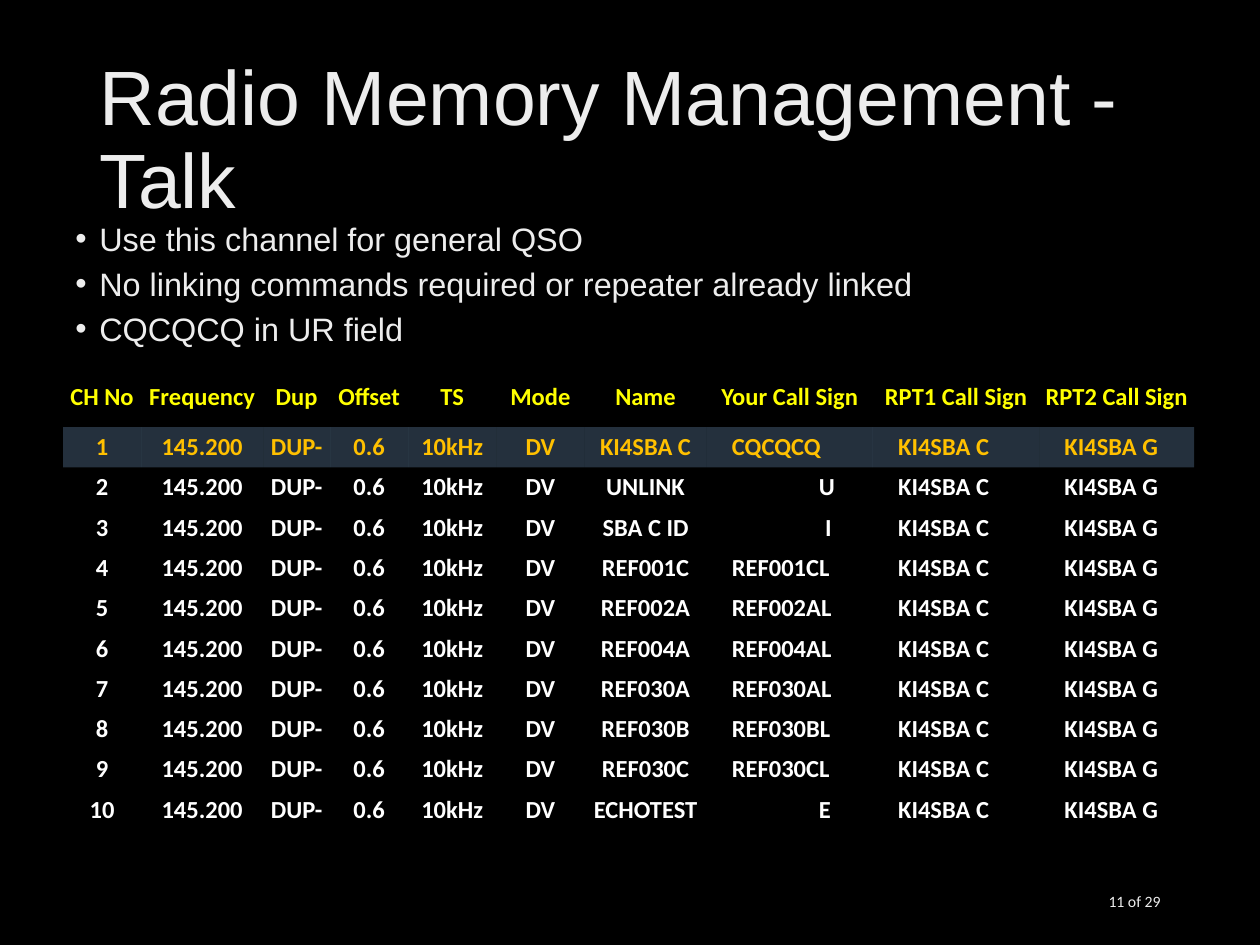
import pptx
import pptx.dml.color
import pptx.enum.text
import pptx.oxml.ns
import pptx.util
from lxml import etree

Inches = pptx.util.Inches
Pt = pptx.util.Pt
RGBColor = pptx.dml.color.RGBColor
ALIGN = pptx.enum.text.PP_ALIGN
MIDDLE = pptx.enum.text.MSO_ANCHOR.MIDDLE
qn = pptx.oxml.ns.qn

BLACK = RGBColor(0x00, 0x00, 0x00)
WHITE = RGBColor(0xFF, 0xFF, 0xFF)
SILVER = RGBColor(0xED, 0xED, 0xED)
YELLOW = RGBColor(0xFF, 0xFF, 0x00)
AMBER = RGBColor(0xFF, 0xC0, 0x00)
SKY = RGBColor(0x99, 0xCC, 0xFF)
PLAIN_TABLE_STYLE = "{2D5ABB26-0587-4C30-8999-92F81FD0307C}"

# Content
TITLE = "Radio Memory Management - Talk"
BULLETS = [
    "Use this channel for general QSO",
    "No linking commands required or repeater already linked",
    "CQCQCQ in UR field",
]
PAGE_NUMBER = "11 of 29"
HEADER = ["CH No", "Frequency", "Dup", "Offset", "TS", "Mode", "Name",
          "Your Call Sign", "RPT1 Call Sign", "RPT2 Call Sign"]
CHANNELS = [  # name, your call sign
    ("KI4SBA C", "CQCQCQ"),
    ("UNLINK", "U"),
    ("SBA C ID", "I"),
    ("REF001C", "REF001CL"),
    ("REF002A", "REF002AL"),
    ("REF004A", "REF004AL"),
    ("REF030A", "REF030AL"),
    ("REF030B", "REF030BL"),
    ("REF030C", "REF030CL"),
    ("ECHOTEST", "E"),
]
RADIO = ["145.200", "DUP-", "0.6", "10kHz", "DV"]
REPEATERS = ["KI4SBA C", "KI4SBA G"]

COLUMN_WIDTHS = [0.62, 0.97, 0.53, 0.62, 0.7, 0.7, 0.97, 1.32, 1.32, 1.23]
HEADER_HEIGHT, ROW_HEIGHT = 0.47, 0.32
FIRST_CALL_COLUMN = HEADER.index("Your Call Sign")
CALL_INDENT = 0.2
COMMAND_INDENTS = {"U": 0.89, "I": 0.94, "E": 0.89}  # command in eighth place


def apply(target, values):
    for name, value in values.items():
        setattr(target, name, value)


def write(para, text, font, size, color, bold=False, **layout):
    para.text = text
    apply(para, layout)
    apply(para.font, {"name": font, "size": Pt(size), "bold": bold})
    para.font.color.rgb = color


def add_box(page, left, top, width, height):
    box = page.shapes.add_textbox(Inches(left), Inches(top),
                                  Inches(width), Inches(height))
    box.text_frame.word_wrap = True
    return box.text_frame


def add_bullet(para):
    properties = para._p.get_or_add_pPr()
    properties.set("marL", str(Inches(0.19)))
    properties.set("indent", str(-Inches(0.19)))
    etree.SubElement(properties, qn("a:buFont"), typeface="Arial")
    etree.SubElement(properties, qn("a:buChar"), char="•")


def fill_highlight(cell):
    cell.fill.solid()
    cell.fill.fore_color.rgb = SKY
    color = cell._tc.tcPr.find(".//" + qn("a:srgbClr"))
    etree.SubElement(color, qn("a:alpha"), val="24000")


def add_channel_table(page):
    rows = [HEADER] + [
        [str(number), *RADIO, name, call, *REPEATERS]
        for number, (name, call) in enumerate(CHANNELS, 1)
    ]
    heights = [HEADER_HEIGHT] + [ROW_HEIGHT] * len(CHANNELS)
    frame = page.shapes.add_table(
        len(rows), len(HEADER), Inches(0.5), Inches(2.92),
        Inches(sum(COLUMN_WIDTHS)), Inches(sum(heights)))
    table = frame.table
    table.horz_banding = False
    table._tbl.tblPr.find(qn("a:tableStyleId")).text = PLAIN_TABLE_STYLE
    for column, width in zip(table.columns, COLUMN_WIDTHS):
        column.width = Inches(width)
    row_colors = [YELLOW, AMBER] + [WHITE] * (len(rows) - 2)
    for r, (texts, height, color) in enumerate(zip(rows, heights, row_colors)):
        table.rows[r].height = Inches(height)
        for c, text in enumerate(texts):
            cell = table.cell(r, c)
            is_call = r > 0 and c >= FIRST_CALL_COLUMN
            indent = COMMAND_INDENTS.get(text, CALL_INDENT) if is_call else 0
            apply(cell, {"margin_left": Inches(indent), "margin_right": 0,
                         "margin_top": 0, "margin_bottom": 0,
                         "vertical_anchor": MIDDLE})
            write(cell.text_frame.paragraphs[0], text, "Calibri", 14, color,
                  bold=True, alignment=ALIGN.LEFT if is_call else ALIGN.CENTER)
            if r == 1:
                fill_highlight(cell)
            else:
                cell.fill.background()


def main():
    deck = pptx.Presentation()
    apply(deck, {"slide_width": Inches(10), "slide_height": Inches(7.5)})
    page = deck.slides.add_slide(deck.slide_layouts[5])
    page.background.fill.solid()
    page.background.fill.fore_color.rgb = BLACK

    # Title
    title = page.shapes.title
    apply(title, {"left": Inches(0.69), "top": Inches(0.4),
                  "width": Inches(8.62), "height": Inches(1.45)})
    apply(title.text_frame, {"vertical_anchor": MIDDLE, "word_wrap": True,
                             "auto_size": pptx.enum.text.MSO_AUTO_SIZE.NONE})
    write(title.text_frame.paragraphs[0], TITLE, "Arial", 44, SILVER,
          alignment=ALIGN.LEFT, line_spacing=0.9)

    # Bullets
    body = add_box(page, 0.5, 1.75, 9, 1.08)
    for i, text in enumerate(BULLETS):
        para = body.add_paragraph() if i else body.paragraphs[0]
        add_bullet(para)
        write(para, text, "Arial", 18.5, SILVER, line_spacing=0.8,
              space_before=Pt(8 if i else 0))

    # Channel table
    add_channel_table(page)

    # Page number
    footer = add_box(page, 7.06, 6.95, 2.25, 0.4)
    footer.vertical_anchor = MIDDLE
    write(footer.paragraphs[0], PAGE_NUMBER, "Calibri", 9, SILVER,
          alignment=ALIGN.RIGHT)

    deck.save("out.pptx")


if __name__ == "__main__":
    main()
